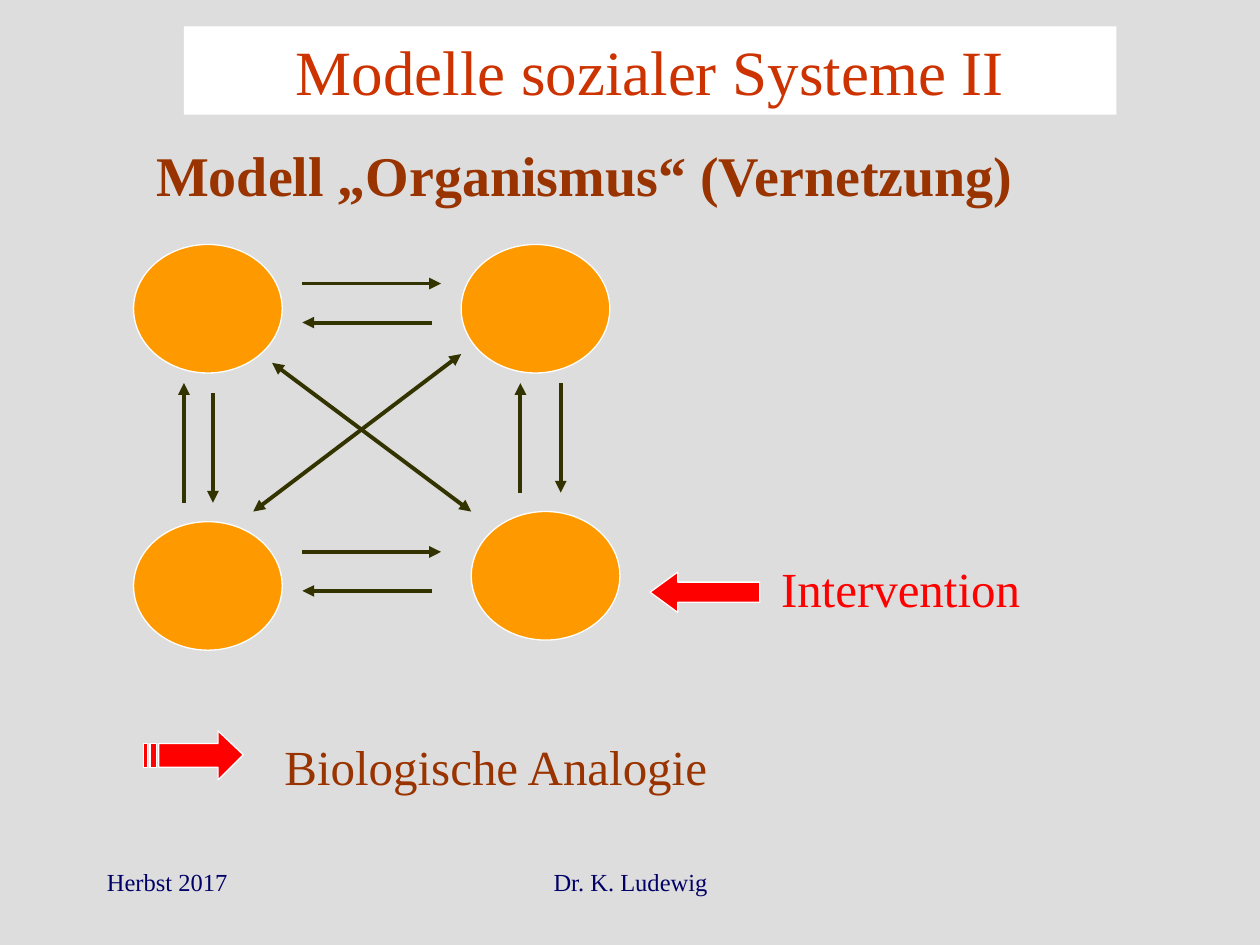
from pptx import Presentation
from pptx.dml.color import RGBColor
from pptx.enum import shapes, text
from pptx.oxml import parse_xml
from pptx.oxml.ns import nsdecls, qn
from pptx.util import Inches, Pt

FONT = "Times New Roman"
ORANGE, RED, WHITE = "FF9900", "FF0000", "FFFFFF"
BROWN, OLIVE, NAVY = "993300", "333300", "000066"
LEFT, CENTER = text.PP_ALIGN.LEFT, text.PP_ALIGN.CENTER

# Content: wording, box, size, colour, bold, alignment
TITLE = ("Modelle sozialer Systeme II", (1.46, 0.21, 7.4, 0.7), 36, "CC3300", False, CENTER)
LABELS = [
    ("Modell „Organismus“ (Vernetzung)", (1.14, 1.07, 7.32, 0.63), 32, BROWN, True, LEFT),
    ("Intervention", (6.1, 4.38, 2.28, 0.57), 28, RED, False, LEFT),
    ("Biologische Analogie", (2.16, 5.8, 4.1, 0.57), 28, BROWN, False, LEFT),
    ("Herbst 2017", (0.75, 6.83, 2.08, 0.5), 14, NAVY, False, LEFT),
    ("Dr. K. Ludewig", (3.42, 6.83, 3.17, 0.5), 14, NAVY, False, CENTER),
]
NODE_SIZE = (1.18, 1.02)
NODES = [(1.06, 1.94), (3.66, 1.94), (1.06, 4.14), (3.74, 4.06)]

# Each pair of arrows: (x1, y1, x2, y2), and whether both ends have heads
ARROW_PAIRS = [
    ([(2.4, y, 3.5, y), (3.43, y + 0.31, 2.4, y + 0.31)], False) for y in (4.38, 2.25)
] + [
    ([(1.46, 3.99, 1.46, 3.04), (1.69, 3.12, 1.69, 3.99)], False),
    ([(4.13, 3.91, 4.13, 3.04), (4.45, 3.04, 4.45, 3.91)], False),
    ([(2.01, 4.06, 3.66, 2.81), (2.16, 2.88, 3.74, 4.06)], True),
]

# Striped arrow: the arrow itself, then the stripes behind it
SHAFT_TOP, SHAFT_BOTTOM = 5.9, 6.09
ARROW = [(1.73, 5.8), (1.73, SHAFT_TOP), (1.26, SHAFT_TOP), (1.26, SHAFT_BOTTOM),
         (1.73, SHAFT_BOTTOM), (1.73, 6.19), (1.93, 5.99)]
STRIPES = [(1.19, 1.24), (1.14, 1.17)]


def rgb(color):
    return RGBColor.from_string(color)


def inches(values):
    return [Inches(v) for v in values]


def paint(sp, fill):
    sp.shadow.inherit = False
    sp.fill.solid()
    sp.fill.fore_color.rgb = rgb(fill)
    sp.line.color.rgb = rgb(WHITE)
    sp.line.width = Pt(0.75)


def write(sp, wording, size, color, bold, align):
    tf = sp.text_frame
    tf.text = wording
    tf.word_wrap = True
    tf.auto_size = text.MSO_AUTO_SIZE.NONE
    tf.vertical_anchor = text.MSO_ANCHOR.TOP
    p = tf.paragraphs[0]
    p.alignment = align
    font = p.runs[0].font
    font.name, font.size, font.bold = FONT, Pt(size), bold
    font.color.rgb = rgb(color)


def add_arrow(group, ends, both):
    line = group.shapes.add_connector(shapes.MSO_CONNECTOR.STRAIGHT, *inches(ends))
    line.line.color.rgb = rgb(OLIVE)
    line.line.width = Pt(2.25)
    ln = line._element.spPr.find(qn("a:ln"))
    for tag in (["headEnd"] if both else []) + ["tailEnd"]:
        ln.append(parse_xml(f'<a:{tag} {nsdecls("a")} type="triangle"/>'))
    line._element.spPr.append(parse_xml(f'<a:effectLst {nsdecls("a")}/>'))


prs = Presentation()
prs.slide_width, prs.slide_height = Inches(10), Inches(7.5)
s = prs.slides.add_slide(prs.slide_layouts[5])
s.background.fill.solid()
s.background.fill.fore_color.rgb = rgb("DDDDDD")

# Title
wording, box, *style = TITLE
title = s.shapes.title
title.left, title.top, title.width, title.height = inches(box)
title.fill.solid()
title.fill.fore_color.rgb = rgb(WHITE)
write(title, wording, *style)

# Nodes of the network
for corner in NODES:
    paint(s.shapes.add_shape(shapes.MSO_SHAPE.OVAL, *inches(corner + NODE_SIZE)), ORANGE)

# Arrows between the nodes
for pair, both in ARROW_PAIRS:
    group = s.shapes.add_group_shape()
    for ends in pair:
        add_arrow(group, ends, both)

# Intervention arrow
intervention = s.shapes.add_shape(shapes.MSO_SHAPE.LEFT_ARROW, *inches((5.16, 4.54, 0.87, 0.32)))
intervention.adjustments[1] = 0.685
paint(intervention, RED)

# Striped arrow, drawn in whole EMU because the builder rounds its points
stripes = [
    [(x1, SHAFT_TOP), (x1, SHAFT_BOTTOM), (x2, SHAFT_BOTTOM), (x2, SHAFT_TOP)]
    for x1, x2 in STRIPES
]
outlines = [[inches(point) for point in outline] for outline in [ARROW] + stripes]
builder = s.shapes.build_freeform(*outlines[0][0])
for i, outline in enumerate(outlines):
    if i:
        builder.move_to(*outline[0])
    builder.add_line_segments(outline[1:], close=True)
paint(builder.convert_to_shape(), RED)

# Labels and footer
for wording, box, *style in LABELS:
    write(s.shapes.add_textbox(*inches(box)), wording, *style)

prs.save("out.pptx")
